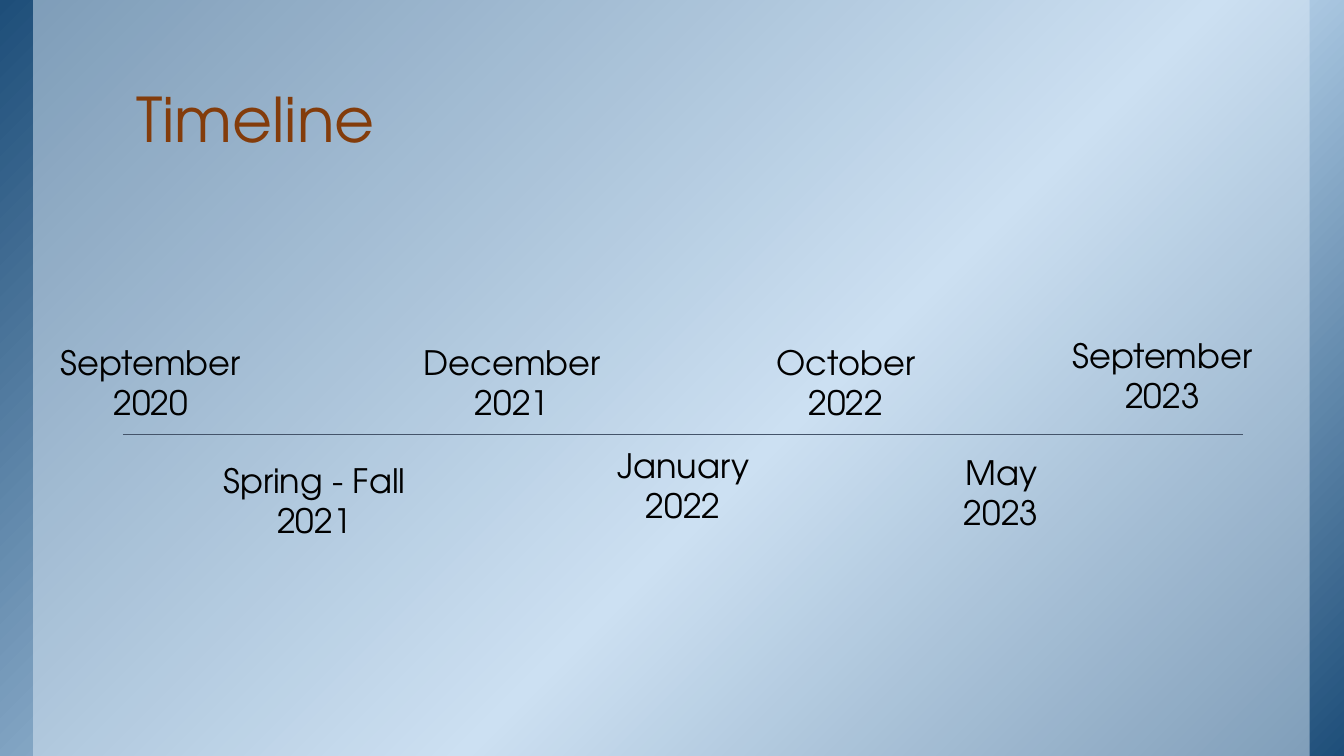
from copy import deepcopy

from lxml import etree
from pptx import Presentation
from pptx.dml.color import RGBColor
from pptx.enum.shapes import MSO_CONNECTOR, MSO_SHAPE
from pptx.enum.text import MSO_ANCHOR, PP_ALIGN
from pptx.oxml.ns import qn
from pptx.util import Inches, Pt

RECT = MSO_SHAPE.RECTANGLE
LINE = MSO_CONNECTOR.STRAIGHT
TOP, BOTTOM = MSO_ANCHOR.TOP, MSO_ANCHOR.BOTTOM
LEFT, CENTER = PP_ALIGN.LEFT, PP_ALIGN.CENTER
FONT = "TeX Gyre Adventor"


def color(code):
    return RGBColor.from_string(code)


def add_text(text, area, size, code, align, anchor, pad):
    box = slide.shapes.add_textbox(*[Inches(n) for n in area])
    frame = box.text_frame
    frame.word_wrap = True
    frame.vertical_anchor = anchor
    frame.margin_left = frame.margin_right = Inches(pad[0])
    frame.margin_top = frame.margin_bottom = Inches(pad[1])
    para = frame.paragraphs[0]
    para.alignment = align
    run = para.add_run()
    run.text = text
    run.font.name = FONT
    run.font.size = Pt(size)
    run.font.color.rgb = color(code)
    return para


deck = Presentation()
deck.slide_width, deck.slide_height = Inches(13.33), Inches(7.5)
slide = deck.slides.add_slide(deck.slide_layouts[6])

# Gradient backdrop
back = slide.shapes.add_shape(RECT, 0, 0, deck.slide_width, deck.slide_height)
back.shadow.inherit = False
back.line.fill.background()
back.fill.gradient()
back.fill.gradient_angle = 315
stops = back.fill._fill._gradFill.find(qn("a:gsLst"))
stops.insert(1, deepcopy(stops[0]))
tints = [(0, "1E4E79"), (0.58, "BBD6EE"), (1, "1E4E79")]
for stop, (place, code) in zip(back.fill.gradient_stops, tints):
    stop.position = place
    stop.color.rgb = color(code)

# Translucent panel
panel = slide.shapes.add_shape(
    RECT, Inches(0.33), 0, Inches(12.66), deck.slide_height)
panel.shadow.inherit = False
panel.line.fill.background()
panel.fill.solid()
panel.fill.fore_color.rgb = color("DDEAF6")
tint = panel.fill._xPr.find(qn("a:solidFill"))[0]
etree.SubElement(tint, qn("a:alpha")).set("val", "50000")

# Title
title = add_text("Timeline", (1.22, 0.08, 11.11, 1.53), 44, "833C0B",
                 LEFT, BOTTOM, (0.13, 0.07))
title.line_spacing = 0.85

# Time axis
axis = slide.shapes.add_connector(
    LINE, Inches(1.22), Inches(4.31), Inches(12.33), Inches(4.31))
axis.line.color.rgb = color("44546A")
axis.line.width = Pt(0.75)
etree.SubElement(axis._element.spPr, qn("a:effectLst"))

# Dates above and below the axis
dates = [
    ("September 2020", (0.26, 3.29, 2.47, 0.86)),
    ("Spring - Fall 2021", (1.83, 4.46, 2.58, 1.11)),
    ("December 2021", (4.02, 3.29, 2.12, 0.86)),
    ("January 2022", (5.65, 4.31, 2.25, 1.26)),
    ("October 2022", (7.53, 3.29, 1.72, 0.86)),
    ("May 2023", (9.25, 4.38, 1.36, 1.11)),
    ("September 2023", (10.41, 3.22, 2.24, 1.01)),
]
for date, area in dates:
    add_text(date, area, 24, "000000", CENTER, TOP, (0.1, 0.1))

deck.save("out.pptx")
